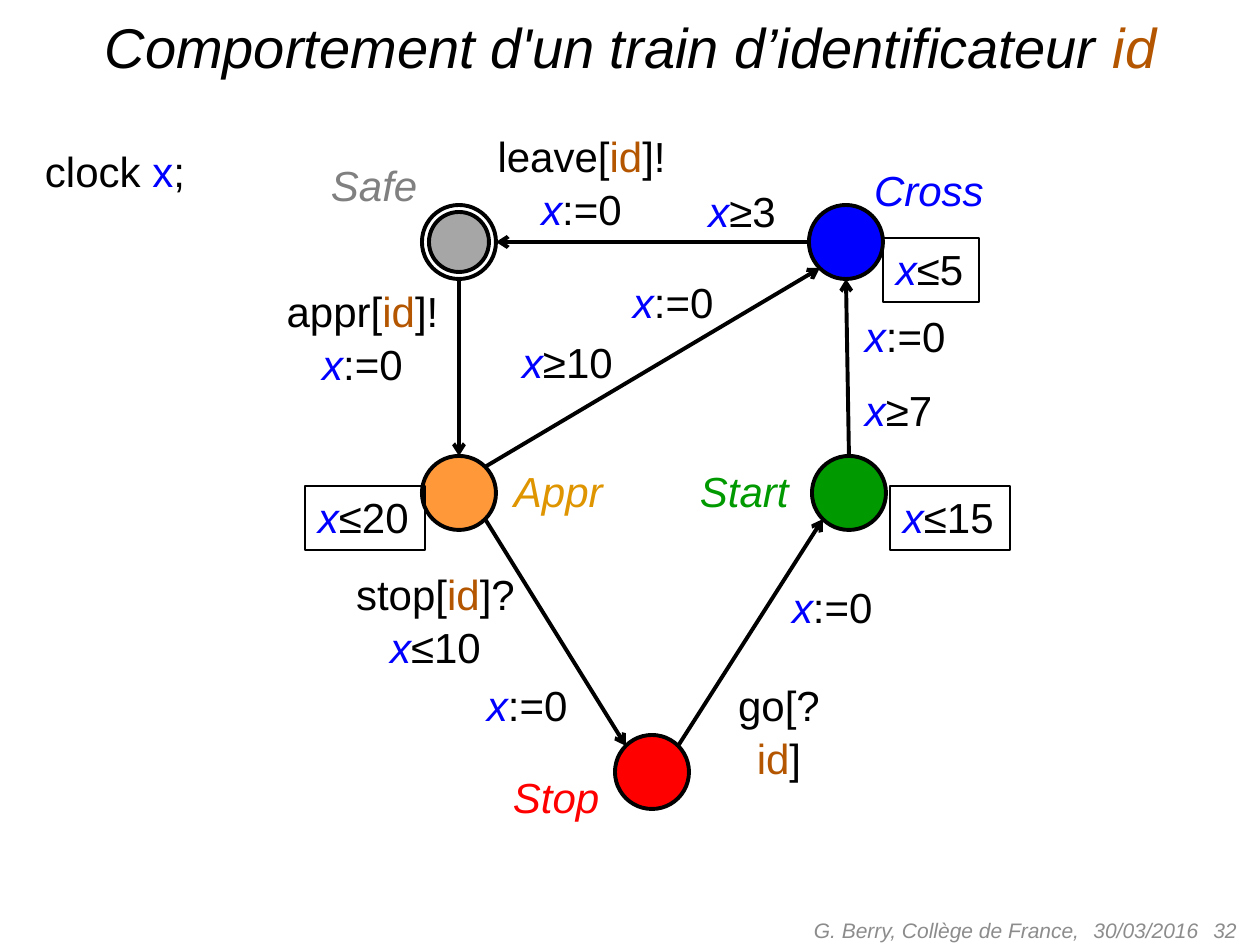
from dataclasses import dataclass
from math import cos, pi, sin
from lxml.etree import SubElement
from pptx import Presentation
from pptx.dml.color import RGBColor
from pptx.enum.shapes import MSO_CONNECTOR, MSO_SHAPE
from pptx.enum.text import MSO_ANCHOR, MSO_AUTO_SIZE, PP_ALIGN
from pptx.oxml.ns import qn
from pptx.util import Pt

PX = 914400 / 126


@dataclass(frozen=True)
class Theme:
    font: str = "Arial"
    title: int = 32
    body: int = 24
    foot: int = 12
    ink: str = "000000"
    clock: str = "0000FF"
    ident: str = "B45600"
    note: str = "8C8C8C"
    safe: str = "A6A6A6"
    appr: str = "FF9839"
    stop: str = "FF0000"
    start: str = "009A00"
    cross: str = "0000FF"
    pale: str = "808080"
    amber: str = "DE9500"


theme = Theme()
hues = {"x": theme.clock, "id": theme.ident, "Safe": theme.pale, "Appr": theme.amber,
        "Stop": theme.stop, "Start": theme.start, "Cross": theme.cross}
slanted = set(hues) - {"id"}


def emu(*sizes):
    return [round(size * PX) for size in sizes]


def write(frame, text, size, align, italic=False, color=theme.ink):
    """Write lines split at newlines into runs split at '|', coloured by word."""
    frame.text = text.replace("|", "")
    for para, line in zip(frame.paragraphs, text.split("\n")):
        para.text = ""
        para.alignment = align
        for word in line.split("|"):
            run = para.add_run()
            run.text = word
            run.font.name, run.font.size = theme.font, Pt(size)
            run.font.italic = italic or word in slanted
            run.font.color.rgb = RGBColor.from_string(hues.get(word, color))


deck = Presentation()
deck.slide_width, deck.slide_height = emu(1260, 945)
slide = deck.slides.add_slide(deck.slide_layouts[5])
shapes = slide.shapes

# Title and footer
title = shapes.title
title.left, title.top, title.width, title.height = emu(32, 6, 1197, 81)
title.text_frame.vertical_anchor = MSO_ANCHOR.MIDDLE
write(title.text_frame, "Comportement d'un train d’identificateur |id",
      theme.title, PP_ALIGN.CENTER, italic=True)

for text, left, width, align in [
    ("G. Berry, Collège de France,", 693, 399, PP_ALIGN.RIGHT),
    ("30/03/2016", 1081, 130, PP_ALIGN.LEFT),
    ("32", 1189, 60, PP_ALIGN.RIGHT),
]:
    frame = shapes.add_textbox(*emu(left, 905, width, 50)).text_frame
    frame.word_wrap = True
    frame.vertical_anchor = MSO_ANCHOR.MIDDLE
    write(frame, text, theme.foot, align, italic=True, color=theme.note)

# States: name, centre, radius, fill
radius = 37
nodes, spots = {}, {}
for name, x, y, reach, fill in [
    ("Safe", 459, 242, radius, None),
    ("Core", 459, 242, 30, theme.safe),
    ("Appr", 459, 493, radius, theme.appr),
    ("Stop", 652, 772, radius, theme.stop),
    ("Start", 849, 493, radius, theme.start),
    ("Cross", 846, 242, radius, theme.cross),
]:
    node = shapes.add_shape(MSO_SHAPE.OVAL, *emu(x - reach, y - reach, 2 * reach, 2 * reach))
    node.shadow.inherit = False
    if fill:
        node.fill.solid()
        node.fill.fore_color.rgb = RGBColor.from_string(fill)
    else:
        node.fill.background()
    node.line.color.rgb = RGBColor.from_string(theme.ink)
    node.line.width = Pt(2.25)
    nodes[name], spots[name] = node, (x, y)

# Transitions: an oval has eight sites, counted anticlockwise from the top
for source, out, target, into in [
    ("Safe", 4, "Appr", 0),
    ("Appr", 5, "Stop", 1),
    ("Stop", 7, "Start", 3),
    ("Start", 0, "Cross", 4),
    ("Appr", 7, "Cross", 3),
    ("Cross", 2, "Safe", 6),
]:
    ends = []
    for name, site in [(source, out), (target, into)]:
        x, y = spots[name]
        turn = site * pi / 4
        ends += [x - radius * sin(turn), y - radius * cos(turn)]
    arrow = shapes.add_connector(MSO_CONNECTOR.STRAIGHT, *emu(*ends))
    arrow.begin_x, arrow.begin_y, arrow.end_x, arrow.end_y = emu(*ends)
    arrow.line.color.rgb = RGBColor.from_string(theme.ink)
    arrow.line.width = Pt(2.25)
    SubElement(arrow.line._get_or_add_ln(), qn("a:tailEnd"), type="arrow")
    SubElement(arrow._element.spPr, qn("a:effectLst"))

# Labels: text, left, top, width, framed
for text, left, top, width, framed in [
    ("clock |x|;", 32, 140, 166, False),
    ("Safe", 318, 154, 123, False),
    ("Cross", 861, 159, 146, False),
    ("Appr", 501, 460, 126, False),
    ("Start", 687, 460, 126, False),
    ("Stop", 500, 766, 123, False),
    ("leave[|id|]!\nx|:=0", 484, 125, 195, False),
    ("appr[|id|]!\nx|:=0", 273, 280, 179, False),
    ("stop[|id|]?\nx|≤10", 343, 563, 185, False),
    ("go[?|id|]", 703, 674, 152, False),
    ("x|≥3", 694, 180, 96, False),
    ("x|≥7", 852, 379, 96, False),
    ("x|≥10", 509, 331, 120, False),
    ("x|:=0", 620, 271, 110, False),
    ("x|:=0", 852, 305, 110, False),
    ("x|:=0", 474, 674, 110, False),
    ("x|:=0", 779, 576, 110, False),
    ("x|≤5", 883, 238, 96, True),
    ("x|≤15", 890, 486, 120, True),
    ("x|≤20", 305, 486, 120, True),
]:
    lines = text.count("\n") + 1
    place = emu(left, top, width, 11 + 53 * lines)
    if framed:
        label = shapes.add_shape(MSO_SHAPE.RECTANGLE, *place)
        label.shadow.inherit = False
        label.fill.background()
        label.line.color.rgb = RGBColor.from_string(theme.ink)
        label.line.width = Pt(1.5)
    else:
        label = shapes.add_textbox(*place)
    frame = label.text_frame
    frame.word_wrap = False
    frame.auto_size = MSO_AUTO_SIZE.SHAPE_TO_FIT_TEXT
    frame.vertical_anchor = MSO_ANCHOR.TOP
    frame.margin_left, frame.margin_top, frame.margin_right, frame.margin_bottom = emu(13, 3, 13, 9)
    centred = lines > 1 or text.startswith("go") or text == "x|≥3"
    write(frame, text, theme.body, PP_ALIGN.CENTER if centred else PP_ALIGN.LEFT)
    for para in frame.paragraphs:
        para.line_spacing = 1.05
    if text.startswith("clock"):
        frame.paragraphs[0].runs[1].font.italic = False

deck.save("out.pptx")
